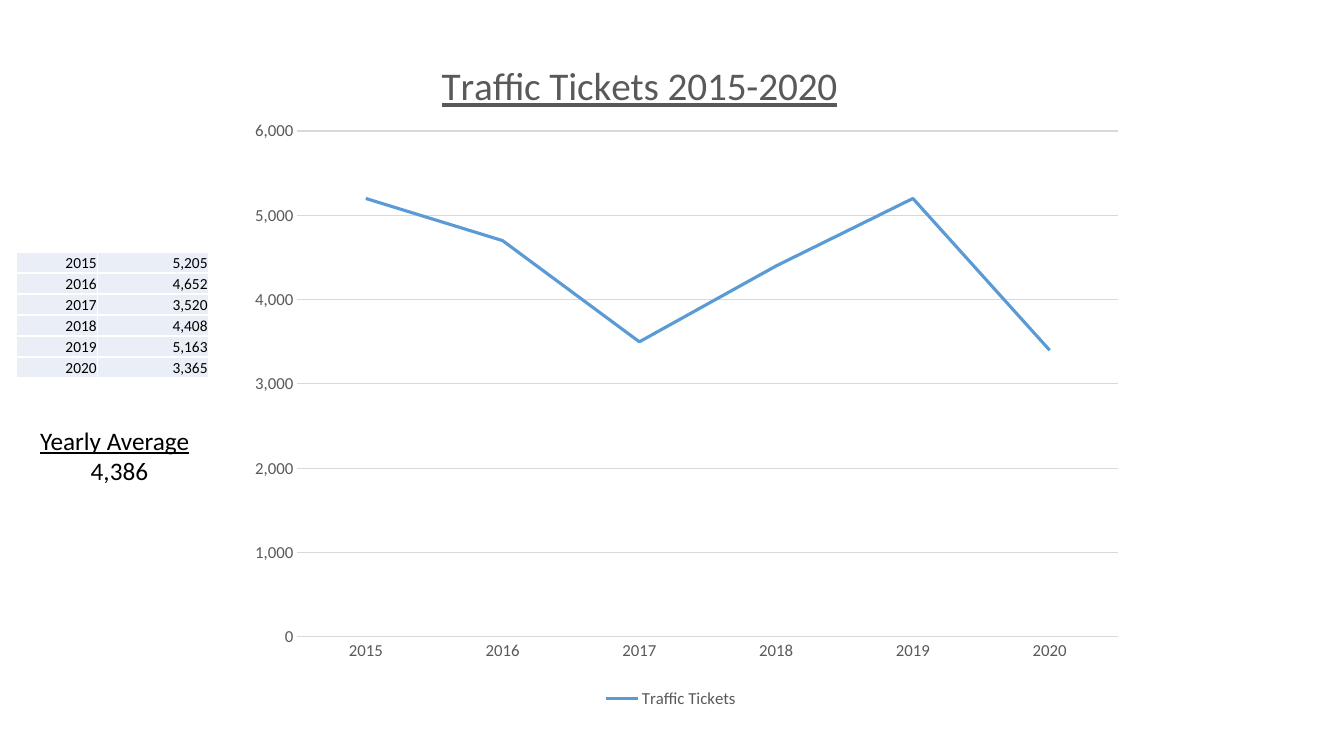
from typing import NamedTuple, Optional

from lxml.etree import SubElement
from pptx import Presentation
from pptx.chart.data import CategoryChartData
from pptx.dml.color import RGBColor
from pptx.enum.chart import XL_CHART_TYPE as ChartType
from pptx.enum.chart import XL_LEGEND_POSITION as LegendPosition
from pptx.enum.chart import XL_MARKER_STYLE as MarkerStyle
from pptx.enum.chart import XL_TICK_MARK as TickMark
from pptx.enum.text import MSO_ANCHOR as Anchor
from pptx.enum.text import PP_ALIGN as Align
from pptx.oxml import parse_xml
from pptx.oxml.ns import nsdecls, qn
from pptx.util import Inches, Pt

BLACK = RGBColor(0x00, 0x00, 0x00)
WHITE = RGBColor(0xFF, 0xFF, 0xFF)
GRAY_TEXT = RGBColor(0x59, 0x59, 0x59)
GRID_GRAY = RGBColor(0xD9, 0xD9, 0xD9)
LINE_BLUE = RGBColor(0x5B, 0x9B, 0xD5)
CELL_BLUE = RGBColor(0xEA, 0xEF, 0xF7)
FONT = "Calibri"
CHART_WIDTH, CHART_HEIGHT = 8.89, 6.55


class YearTotal(NamedTuple):
    year: str
    tickets: int


class ChartArea(NamedTuple):
    """A place inside the chart, in inches from its top left corner."""
    left: float
    top: float
    width: Optional[float] = None
    height: Optional[float] = None


TOTALS = [
    YearTotal("2015", 5205),
    YearTotal("2016", 4652),
    YearTotal("2017", 3520),
    YearTotal("2018", 4408),
    YearTotal("2019", 5163),
    YearTotal("2020", 3365),
]
TITLE_AREA = ChartArea(2.1, 0)
PLOT_AREA = ChartArea(0.74, 0.78, 8.14, 5.02)


def style_font(font, size: float, color: RGBColor, underline: bool = False) -> None:
    font.name = FONT
    font.size = Pt(size)
    font.color.rgb = color
    font.bold = False
    font.underline = underline


def style_line(line, color: RGBColor, width: float) -> None:
    line.color.rgb = color
    line.width = Pt(width)


def place_in_chart(element, index: int, area: ChartArea) -> None:
    """Give a chart element a manual layout, as its child at the index."""
    for old_layout in element.findall(qn("c:layout")):
        element.remove(old_layout)
    layout = parse_xml(f"<c:layout {nsdecls('c')}><c:manualLayout/></c:layout>")
    manual = layout[0]
    if area.width is not None:
        SubElement(manual, qn("c:layoutTarget")).set("val", "inner")
    for tag in ("xMode", "yMode"):
        SubElement(manual, qn(f"c:{tag}")).set("val", "edge")
    scale = (CHART_WIDTH, CHART_HEIGHT) * 2
    for tag, length, whole in zip("xywh", area, scale):
        if length is not None:
            SubElement(manual, qn(f"c:{tag}")).set("val", str(length / whole))
    element.insert(index, layout)


def add_ticket_chart(slide) -> None:
    """Plot the totals, rounded to hundreds."""
    data = CategoryChartData(number_format="#,##0")
    data.categories = [total.year for total in TOTALS]
    data.add_series("Traffic Tickets", [round(total.tickets, -2) for total in TOTALS])
    chart = slide.shapes.add_chart(
        ChartType.LINE, Inches(2.21), Inches(0.52),
        Inches(CHART_WIDTH), Inches(CHART_HEIGHT), data,
    ).chart
    style_font(chart.font, 12, GRAY_TEXT)

    title = chart.chart_title
    title.text_frame.text = "Traffic Tickets 2015-2020"
    style_font(title.text_frame.paragraphs[0].font, 28, GRAY_TEXT, underline=True)
    title.include_in_layout = False
    place_in_chart(title._element, 1, TITLE_AREA)
    place_in_chart(chart._chartSpace.chart.plotArea, 0, PLOT_AREA)

    chart.has_legend = True
    chart.legend.position = LegendPosition.BOTTOM
    chart.legend.include_in_layout = False
    style_font(chart.legend.font, 12, GRAY_TEXT)

    for axis in (chart.category_axis, chart.value_axis):
        axis.major_tick_mark = axis.minor_tick_mark = TickMark.NONE
        style_font(axis.tick_labels.font, 12, GRAY_TEXT)
    style_line(chart.category_axis.format.line, GRID_GRAY, 0.75)
    value_axis = chart.value_axis
    value_axis.minimum_scale, value_axis.maximum_scale = 0, 6000
    value_axis.major_unit = 1000
    value_axis.tick_labels.number_format = "#,##0"
    value_axis.tick_labels.number_format_is_linked = False
    value_axis.format.line.fill.background()
    style_line(value_axis.major_gridlines.format.line, GRID_GRAY, 0.75)

    chart.plots[0].vary_by_categories = False
    series = chart.plots[0].series[0]
    series.smooth = False
    series.marker.style = MarkerStyle.NONE
    style_line(series.format.line, LINE_BLUE, 2.25)


def fill_cell(cell, text: str) -> None:
    cell.text = text
    cell.vertical_anchor = Anchor.BOTTOM
    cell.margin_left = cell.margin_right = cell.margin_top = Inches(0.01)
    cell.margin_bottom = 0
    paragraph = cell.text_frame.paragraphs[0]
    paragraph.alignment = Align.RIGHT
    style_font(paragraph.font, 11, BLACK)
    properties = cell._tc.get_or_add_tcPr()
    for side in "LRTB":
        border = SubElement(properties, qn(f"a:ln{side}"), w=str(Pt(1)))
        border_fill = SubElement(border, qn("a:solidFill"))
        SubElement(border_fill, qn("a:srgbClr"), val=str(WHITE))
    cell.fill.solid()
    cell.fill.fore_color.rgb = CELL_BLUE


def add_ticket_table(slide) -> None:
    table = slide.shapes.add_table(
        len(TOTALS), 2, Inches(0.16), Inches(2.5), Inches(1.91), Inches(1.25)
    ).table
    table.first_row = table.horz_banding = False
    for column, width in zip(table.columns, (0.81, 1.1)):
        column.width = Inches(width)
    for row, total in zip(table.rows, TOTALS):
        for cell, text in zip(row.cells, (total.year, f"{total.tickets:,}")):
            fill_cell(cell, text)


def add_yearly_average(slide) -> None:
    text_frame = slide.shapes.add_textbox(
        Inches(0.3), Inches(4.17), Inches(1.77), Inches(1.01)
    ).text_frame
    text_frame.word_wrap = True
    heading = text_frame.paragraphs[0]
    heading.text = "Yearly Average"
    style_font(heading.font, 18, BLACK, underline=True)
    average = text_frame.add_paragraph()
    average.text = "4,386"
    average.alignment = Align.CENTER
    style_font(average.font, 18, BLACK)


def main() -> None:
    presentation = Presentation()
    presentation.slide_width = Inches(13.33)
    presentation.slide_height = Inches(7.5)
    slide = presentation.slides.add_slide(presentation.slide_layouts[6])
    add_ticket_chart(slide)
    add_ticket_table(slide)
    add_yearly_average(slide)
    presentation.save("out.pptx")


if __name__ == "__main__":
    main()
